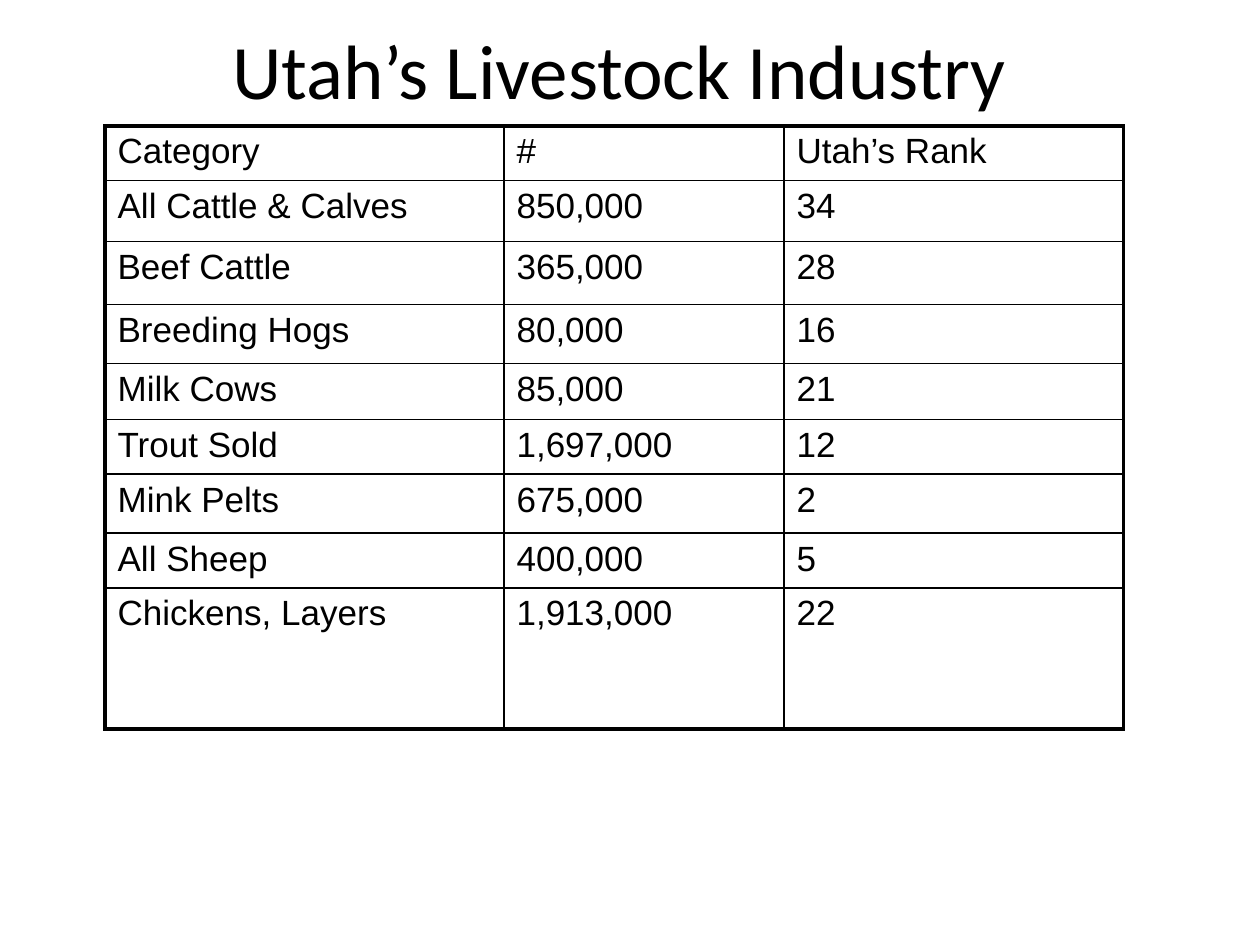
from lxml.etree import SubElement
from pptx import Presentation
from pptx.dml.color import RGBColor
from pptx.enum.text import MSO_ANCHOR, PP_ALIGN
from pptx.oxml.ns import qn
from pptx.util import Pt

BLACK = "000000"
THICK, THIN = 2.25, 1


def add_span(para, text, font, size, color):
    span = para.add_run()
    span.text = text
    span.font.name = font
    span.font.size = Pt(size)
    span.font.color.rgb = RGBColor.from_string(color)


def add_border(cell, side, width, color):
    line = SubElement(cell._tc.get_or_add_tcPr(), qn(f"a:ln{side}"), w=str(Pt(width)))
    fill = SubElement(line, qn("a:solidFill"))
    SubElement(fill, qn("a:srgbClr"), val=color)


deck = Presentation()
deck.slide_width, deck.slide_height = Pt(720), Pt(540)
page = deck.slides.add_slide(deck.slide_layouts[6])

title = page.shapes.add_textbox(Pt(48), Pt(18), Pt(612), Pt(42))
title.text_frame.word_wrap = True
title.text_frame.vertical_anchor = MSO_ANCHOR.MIDDLE
para = title.text_frame.paragraphs[0]
para.alignment = PP_ALIGN.CENTER
add_span(para, "Utah’s Livestock Industry", "Calibri", 44, BLACK)

livestock = [
    ("Category", "#", "Utah’s Rank"),
    ("All Cattle & Calves", "850,000", "34"),
    ("Beef Cattle", "365,000", "28"),
    ("Breeding Hogs", "80,000", "16"),
    ("Milk Cows", "85,000", "21"),
    ("Trout Sold", "1,697,000", "12"),
    ("Mink Pelts", "675,000", "2"),
    ("All Sheep", "400,000", "5"),
    ("Chickens, Layers", "1,913,000", "22"),
]
widths = [228, 160, 194]
heights = [30, 34.75, 36, 33.75, 32, 29.75, 33.75, 31.25, 80.75]

frame = page.shapes.add_table(
    len(heights), len(widths), Pt(60), Pt(72), Pt(sum(widths)), Pt(sum(heights))
)
table = frame.table
table.first_row = False
table.horz_banding = False
for column, width in zip(table.columns, widths):
    column.width = Pt(width)
for row, height in zip(table.rows, heights):
    row.height = Pt(height)

last_row, last_column = len(heights) - 1, len(widths) - 1
for r, record in enumerate(livestock):
    for c, text in enumerate(record):
        cell = table.cell(r, c)
        outer_edges = {"L": c == 0, "R": c == last_column, "T": r == 0, "B": r == last_row}
        for side, outer in outer_edges.items():
            add_border(cell, side, THICK if outer else THIN, BLACK)
        cell.fill.background()
        add_span(cell.text_frame.paragraphs[0], text, "Arial", 20, BLACK)

deck.save("out.pptx")
